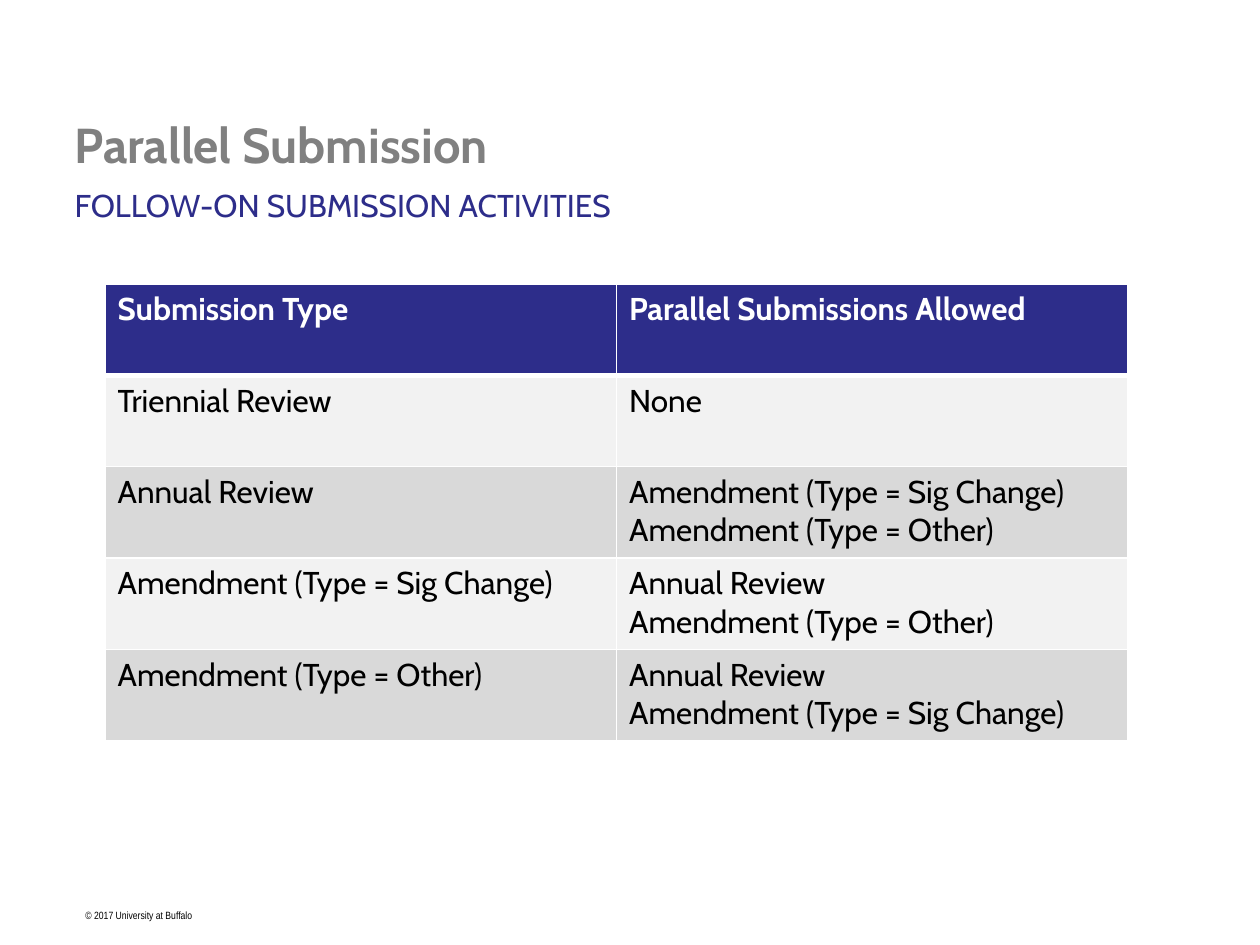
from lxml import etree
from pptx import Presentation
from pptx import util as u
from pptx.dml.color import RGBColor
from pptx.enum import text
from pptx.oxml.ns import qn

PX = u.Inches(1) / 126
NAVY = RGBColor(0x2D, 0x2D, 0x8A)
GRAY = RGBColor(0x80, 0x80, 0x80)
LIGHT = RGBColor(0xF2, 0xF2, 0xF2)
MEDIUM = RGBColor(0xD9, 0xD9, 0xD9)
WHITE = RGBColor(0xFF, 0xFF, 0xFF)
BLACK = RGBColor(0, 0, 0)

ROWS = [
    ("Submission Type", "Parallel Submissions Allowed"),
    ("Triennial Review", "None"),
    ("Annual Review", "Amendment (Type = Sig Change)\nAmendment (Type = Other)"),
    ("Amendment (Type = Sig Change)", "Annual Review\nAmendment (Type = Other)"),
    ("Amendment (Type = Other)", "Annual Review\nAmendment (Type = Sig Change)"),
]


def px(length):
    return u.Emu(round(length * PX))


def write(frame, words, size, color, bold=False, font="Cabin"):
    frame.text = words
    for paragraph in frame.paragraphs:
        paragraph.alignment = text.PP_ALIGN.LEFT
        paragraph.space_before = u.Pt(0)
        paragraph.font.name = font
        paragraph.font.size = u.Pt(size)
        paragraph.font.bold = bold
        paragraph.font.color.rgb = color


def fill_placeholder(shape, box, anchor, words, size, color, bold=False):
    shape.left, shape.top, shape.width, shape.height = map(px, box)
    frame = shape.text_frame
    frame.auto_size = text.MSO_AUTO_SIZE.NONE
    frame.vertical_anchor = anchor
    write(frame, words, size, color, bold)


def add_headings(slide, left, top, width):
    fill_placeholder(slide.shapes.title, (left, top, width, 71), text.MSO_ANCHOR.MIDDLE,
                     "Parallel Submission", 28, GRAY, True)
    fill_placeholder(slide.placeholders[1], (left, top + 72, width, 63), text.MSO_ANCHOR.TOP,
                     "FOLLOW-ON SUBMISSION ACTIVITIES", 18, NAVY)


def set_borders(cell, widths):
    properties = cell._tc.get_or_add_tcPr()
    for side, width in widths.items():
        line = etree.SubElement(properties, qn(f"a:ln{side}"), w=str(u.Pt(width)))
        solid = etree.SubElement(line, qn("a:solidFill"))
        etree.SubElement(solid, qn("a:srgbClr"), val=str(WHITE))


def add_submission_table(slide, left, top, width, height):
    table = slide.shapes.add_table(len(ROWS), len(ROWS[0]),
                                   *map(px, (left, top, width, height))).table
    for r, row in enumerate(ROWS):
        header = r == 0
        fill = NAVY if header else LIGHT if r % 2 else MEDIUM
        for c, words in enumerate(row):
            cell = table.cell(r, c)
            # A thicker rule separates the header from the body
            set_borders(cell, {"L": 1, "R": 1, "T": 3 if r == 1 else 1, "B": 3 if header else 1})
            cell.fill.solid()
            cell.fill.fore_color.rgb = fill
            write(cell.text_frame, words, 18, WHITE if header else BLACK, header)


def add_copyright(slide, left, top, width, height):
    frame = slide.shapes.add_textbox(*map(px, (left, top, width, height))).text_frame
    frame.word_wrap = False
    frame.auto_size = text.MSO_AUTO_SIZE.SHAPE_TO_FIT_TEXT
    write(frame, "© 2017 University at Buffalo", 6, BLACK, font="Arial Narrow")


def main():
    presentation = Presentation()
    presentation.slide_width, presentation.slide_height = px(1260), px(945)
    slide = presentation.slides.add_slide(presentation.slide_layouts[0])
    add_copyright(slide, 73, 903, 134, 25)
    add_headings(slide, 62, 108, 888)
    add_submission_table(slide, 105, 284, 1023, 457)
    presentation.save("out.pptx")


if __name__ == "__main__":
    main()
